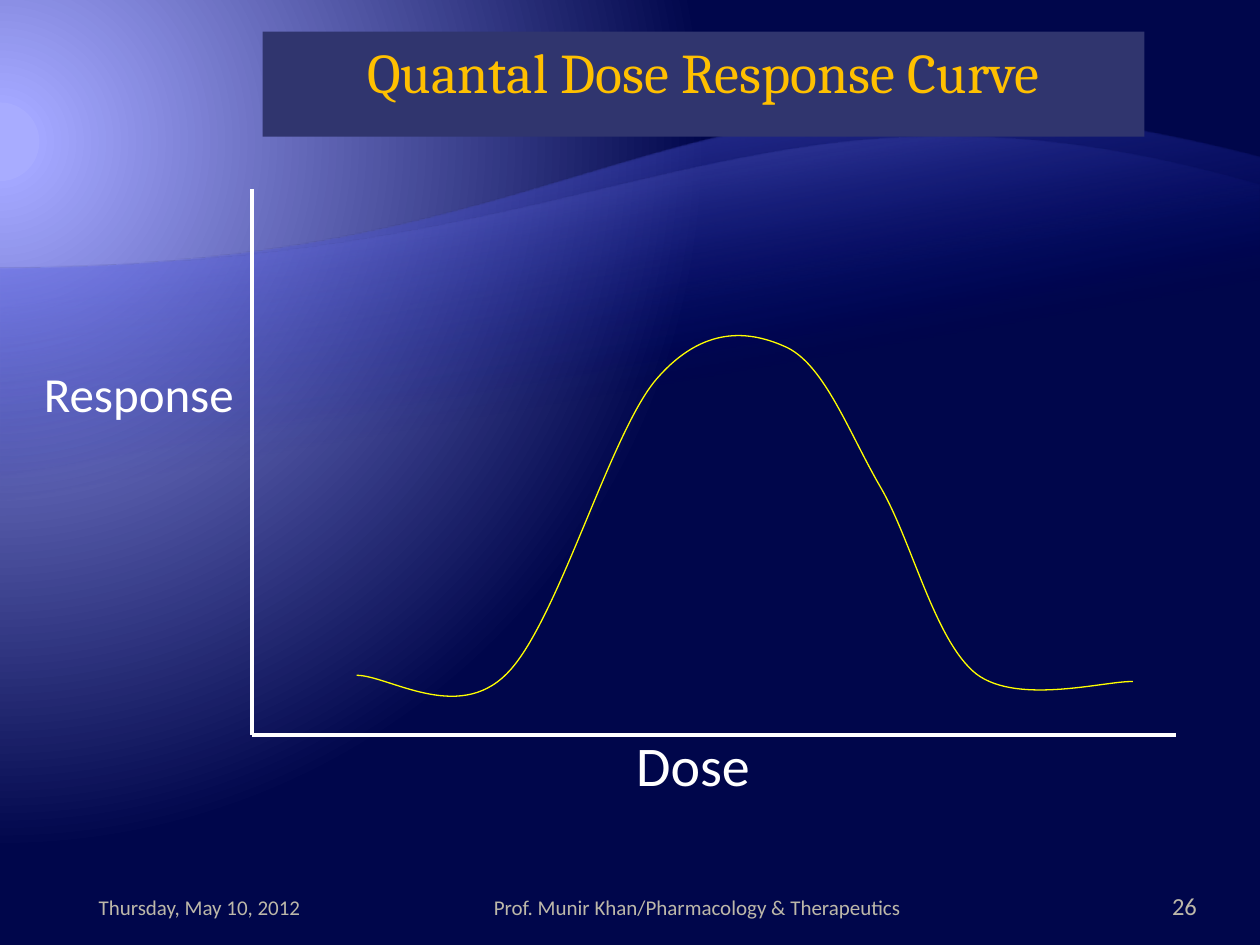
import pptx
import pptx.util
import pptx.dml.color
import pptx.enum.text
import pptx.oxml
import pptx.oxml.ns
from lxml import etree

Pt = pptx.util.Pt
RGB = pptx.dml.color.RGBColor
Align = pptx.enum.text.PP_ALIGN
Anchor = pptx.enum.text.MSO_ANCHOR
Size = pptx.enum.text.MSO_AUTO_SIZE

WHITE = RGB(0xFF, 0xFF, 0xFF)
YELLOW = RGB(0xFF, 0xFF, 0x00)
GOLD = RGB(0xFF, 0xC0, 0x00)
SLATE = RGB(0x30, 0x35, 0x6E)
SAND = RGB(0xBD, 0xB8, 0xA9)
NAVY = RGB(0x00, 0x06, 0x4B)
BLUE = RGB(0x00, 0x0D, 0x9E)
LILAC = RGB(0x79, 0x7F, 0xFF)
PALE = RGB(0xA3, 0xA7, 0xFF)
GLOW = RGB(0xA8, 0xAC, 0xFF)

WIDE, HIGH = 720, 540
TITLE = "Quantal Dose Response Curve"
SKY = [(5, GLOW, 100), (5, PALE, 100), (90, NAVY, 100)]
SPOT = ('<a:path path="circle"><a:fillToRect l="20000" t="30000" '
        'r="135000" b="100000"/></a:path>')
SLANT = '<a:lin ang="15600000" scaled="0"/>'

WAVES = [
    (90, 527.8, (384.5, 3.6), LILAC, 55),
    (105.8, 458.6, (430.6, 22.3), PALE, 30),
]
CREST = 153.4

BELL = [
    [(203.8, 385.9)],
    [(221.8, 385.9), (261.4, 413.3), (289.4, 385.2)],
    [(318.2, 357.1), (348.5, 247.7), (375.1, 216.7)],
    [(401.8, 185.8), (428.4, 188.6), (450, 198.7)],
    [(471.6, 209.5), (485.3, 247.7), (503.3, 278.6)],
    [(521.3, 309.6), (534.2, 366.5), (558, 385.2)],
    [(581.8, 403.2), (632.9, 388.8), (647.3, 389.5)],
]

ORIGIN = (144, 420)
AXES = [(144, 108), (672, 420)]

LABELS = [
    ("Dose", (294, 414, 204, 46), 32, Align.CENTER),
    ("Response", (18, 204, 132, 41), 28, Align.LEFT),
]
FOOTER = [
    ("Thursday, May 10, 2012", (36, 500.5, 156, 28.75), 12, Align.CENTER, 7.2, 7.2),
    ("Prof. Munir Khan/Pharmacology & Therapeutics",
     (192, 500.5, 420, 28.75), 12, Align.CENTER, 0, 7.2),
    ("26", (642, 500.5, 42, 28.75), 14, Align.RIGHT, 7.2, 0),
]


def shade(fill, root, stops, kind):
    fill.gradient()
    old = root.xpath(".//a:gradFill")[0]
    marks = "".join(
        f'<a:gs pos="{pos * 1000}"><a:srgbClr val="{color}">'
        f'<a:alpha val="{alpha * 1000}"/></a:srgbClr></a:gs>'
        for pos, color, alpha in stops)
    new = pptx.oxml.parse_xml(
        f'<a:gradFill {pptx.oxml.ns.nsdecls("a")} rotWithShape="1">'
        f'<a:gsLst>{marks}</a:gsLst>{kind}</a:gradFill>')
    old.getparent().replace(old, new)


def outline(shapes, box, steps, closed):
    left, top, right, low = box
    draft = shapes.build_freeform(Pt(left), Pt(top))
    draft.add_line_segments(
        [(Pt(right), Pt(top)), (Pt(right), Pt(low)), (Pt(left), Pt(low))])
    shape = draft.convert_to_shape()
    shape.shadow.inherit = False
    route = shape._element.xpath(".//a:path")[0]
    for child in list(route):
        route.remove(child)
    qn = pptx.oxml.ns.qn
    for index, step in enumerate(steps):
        tag = "a:moveTo" if index == 0 else "a:cubicBezTo" if len(step) == 3 else "a:lnTo"
        move = etree.SubElement(route, qn(tag))
        for x, y in step:
            etree.SubElement(move, qn("a:pt"), x=str(int(Pt(x - left))),
                             y=str(int(Pt(y - top))))
    if closed:
        etree.SubElement(route, qn("a:close"))
    return shape


def write(shape, text, size, face, color, align, anchor=Anchor.TOP, fit=Size.NONE):
    frame = shape.text_frame
    frame.text = text
    frame.word_wrap = True
    frame.auto_size = fit
    frame.vertical_anchor = anchor
    para = frame.paragraphs[0]
    para.alignment = align
    para.font.size = Pt(size)
    para.font.name = face
    para.font.color.rgb = color
    return frame


def place(shape, box):
    shape.left, shape.top, shape.width, shape.height = map(Pt, box)


def main():
    deck = pptx.Presentation()
    deck.slide_width, deck.slide_height = Pt(WIDE), Pt(HIGH)
    slide = deck.slides.add_slide(deck.slide_layouts[5])
    shapes = slide.shapes
    shade(slide.background.fill, slide._element, SKY, SPOT)

    for top, low, bend, tint, alpha in WAVES:
        steps = [[(0, low)], [(0, CREST)], [(WIDE / 2, CREST), bend, (WIDE, top)],
                 [(WIDE, low)]]
        wave = outline(shapes, (0, top, WIDE, low), steps, True)
        shade(wave.fill, wave._element, [(65, BLUE, 0), (100, tint, alpha)], SLANT)
        wave.line.fill.background()

    for text, box, size, align, left, right in FOOTER:
        note = shapes.add_textbox(*map(Pt, box))
        frame = write(note, text, size, "Calibri", SAND, align, Anchor.BOTTOM)
        frame.margin_left, frame.margin_right = Pt(left), Pt(right)

    xs, ys = zip(*(point for step in BELL for point in step))
    bell = outline(shapes, (min(xs), min(ys), max(xs), max(ys)), BELL, False)
    bell.fill.background()
    bell.line.color.rgb = YELLOW
    bell.line.width = Pt(0.75)

    for end in AXES:
        axis = shapes.add_connector(
            pptx.enum.shapes.MSO_CONNECTOR.STRAIGHT, *map(Pt, ORIGIN + end))
        axis.line.color.rgb = WHITE
        axis.line.width = Pt(2.25)
        etree.SubElement(axis._element.spPr, pptx.oxml.ns.qn("a:effectLst"))

    title = shapes.title
    shapes._spTree.append(title._element)
    place(title, (150, 18, 504, 46))
    title.fill.solid()
    title.fill.fore_color.rgb = SLATE
    write(title, TITLE, 32, "Cambria", GOLD, Align.CENTER, fit=Size.SHAPE_TO_FIT_TEXT)

    for text, box, size, align in LABELS:
        label = shapes.add_textbox(*map(Pt, box))
        write(label, text, size, "Calibri", WHITE, align, fit=Size.SHAPE_TO_FIT_TEXT)

    deck.save("out.pptx")


if __name__ == "__main__":
    import pptx.enum.shapes
    main()
